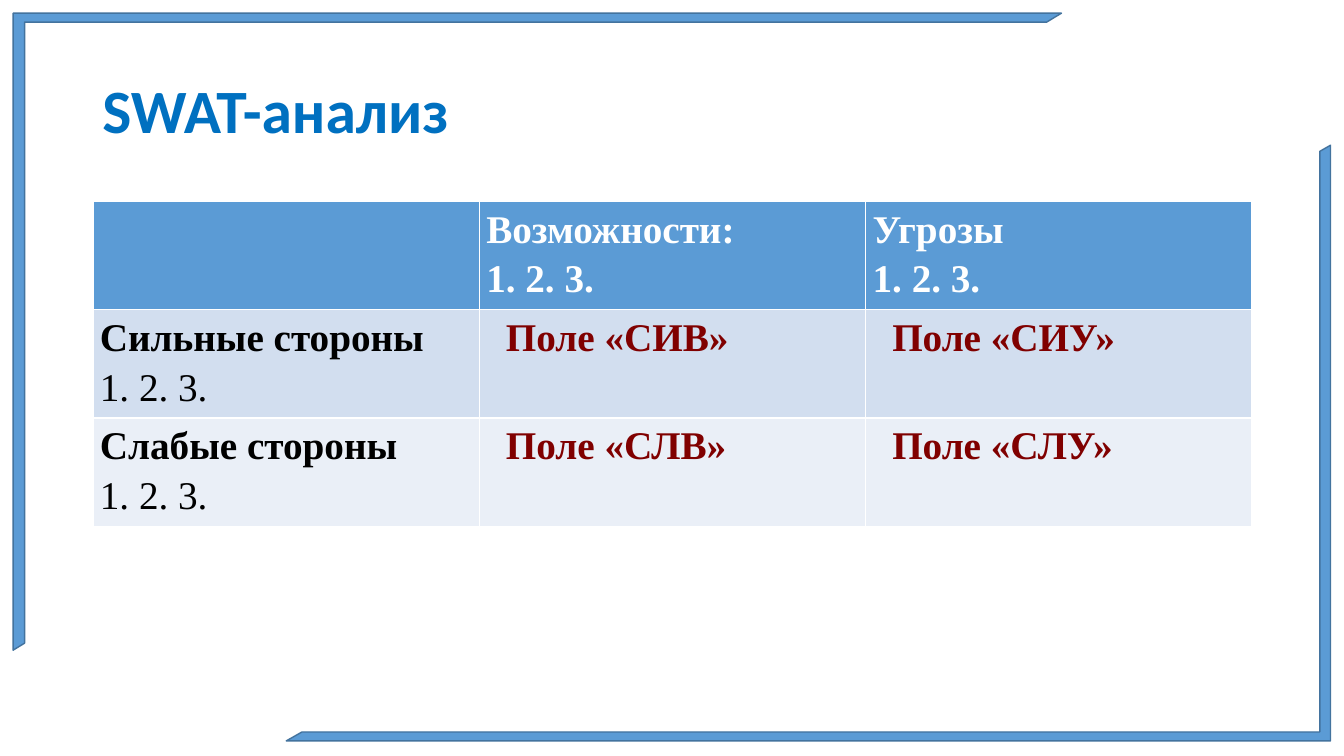
"""Builds the SWAT analysis slide with its corner frames and matrix."""
from pptx import Presentation
from pptx.dml.color import RGBColor
from pptx.enum.shapes import MSO_SHAPE
from pptx.enum.text import MSO_ANCHOR, PP_ALIGN
from pptx.util import Pt

BLUE = RGBColor(0x5B, 0x9B, 0xD5)
FRAME_EDGE = RGBColor(0x43, 0x73, 0x9E)
TITLE_BLUE = RGBColor(0x00, 0x70, 0xC0)
LIGHT_BAND = RGBColor(0xD2, 0xDE, 0xEF)
PALE_BAND = RGBColor(0xEA, 0xEF, 0xF7)
MAROON = RGBColor(0x80, 0x00, 0x00)
WHITE = RGBColor(0xFF, 0xFF, 0xFF)
BLACK = RGBColor(0x00, 0x00, 0x00)

prs = Presentation()
prs.slide_width, prs.slide_height = Pt(960), Pt(540)
slide = prs.slides.add_slide(prs.slide_layouts[6])

CORNERS = [
    (9.4, 9.4, 748.8, 455, 0, 0.014),
    (204.5, 103.7, 745.9, 425.5, 180, 0.015),
]
for left, top, width, height, rotation, thickness in CORNERS:
    corner = slide.shapes.add_shape(
        MSO_SHAPE.HALF_FRAME, Pt(left), Pt(top), Pt(width), Pt(height))
    corner.rotation = rotation
    corner.adjustments[0] = thickness
    corner.adjustments[1] = 0.018
    corner.shadow.inherit = False
    corner.fill.solid()
    corner.fill.fore_color.rgb = BLUE
    corner.line.color.rgb = FRAME_EDGE
    corner.line.width = Pt(1)

title = slide.shapes.add_textbox(Pt(66), Pt(28.8), Pt(828), Pt(104.4)).text_frame
title.word_wrap = True
title.vertical_anchor = MSO_ANCHOR.MIDDLE
heading = title.paragraphs[0]
heading.text = "SWAT-анализ"
heading.line_spacing = 0.9
heading.font.name = "Calibri"
heading.font.size = Pt(44)
heading.font.bold = True
heading.font.color.rgb = TITLE_BLUE

MATRIX = [
    ["", "Возможности:\n1. 2. 3.", "Угрозы\n1. 2. 3."],
    ["Сильные стороны\n1. 2. 3.", "Поле «СИВ»", "Поле «СИУ»"],
    ["Слабые стороны\n1. 2. 3.", "Поле «СЛВ»", "Поле «СЛУ»"],
]
ROW_FILLS = [BLUE, LIGHT_BAND, PALE_BAND]
matrix = slide.shapes.add_table(3, 3, Pt(66.4), Pt(144), Pt(828), Pt(213)).table

for r, texts in enumerate(MATRIX):
    for c, text in enumerate(texts):
        cell = matrix.cell(r, c)
        cell.fill.solid()
        cell.fill.fore_color.rgb = ROW_FILLS[r]
        cell.margin_left = cell.margin_right = Pt(5)
        cell.margin_top = cell.margin_bottom = 0
        cell.text = text
        is_field = r > 0 and c > 0
        for i, line in enumerate(cell.text_frame.paragraphs):
            line.alignment = PP_ALIGN.JUSTIFY
            line.line_spacing = 1.15
            line.font.name = "Times New Roman"
            line.font.size = Pt(28)
            line.font.bold = r == 0 or i == 0
            line.font.color.rgb = WHITE if r == 0 else MAROON if is_field else BLACK
            if is_field:
                line._p.get_or_add_pPr().set("marL", str(Pt(14)))

prs.save("out.pptx")
